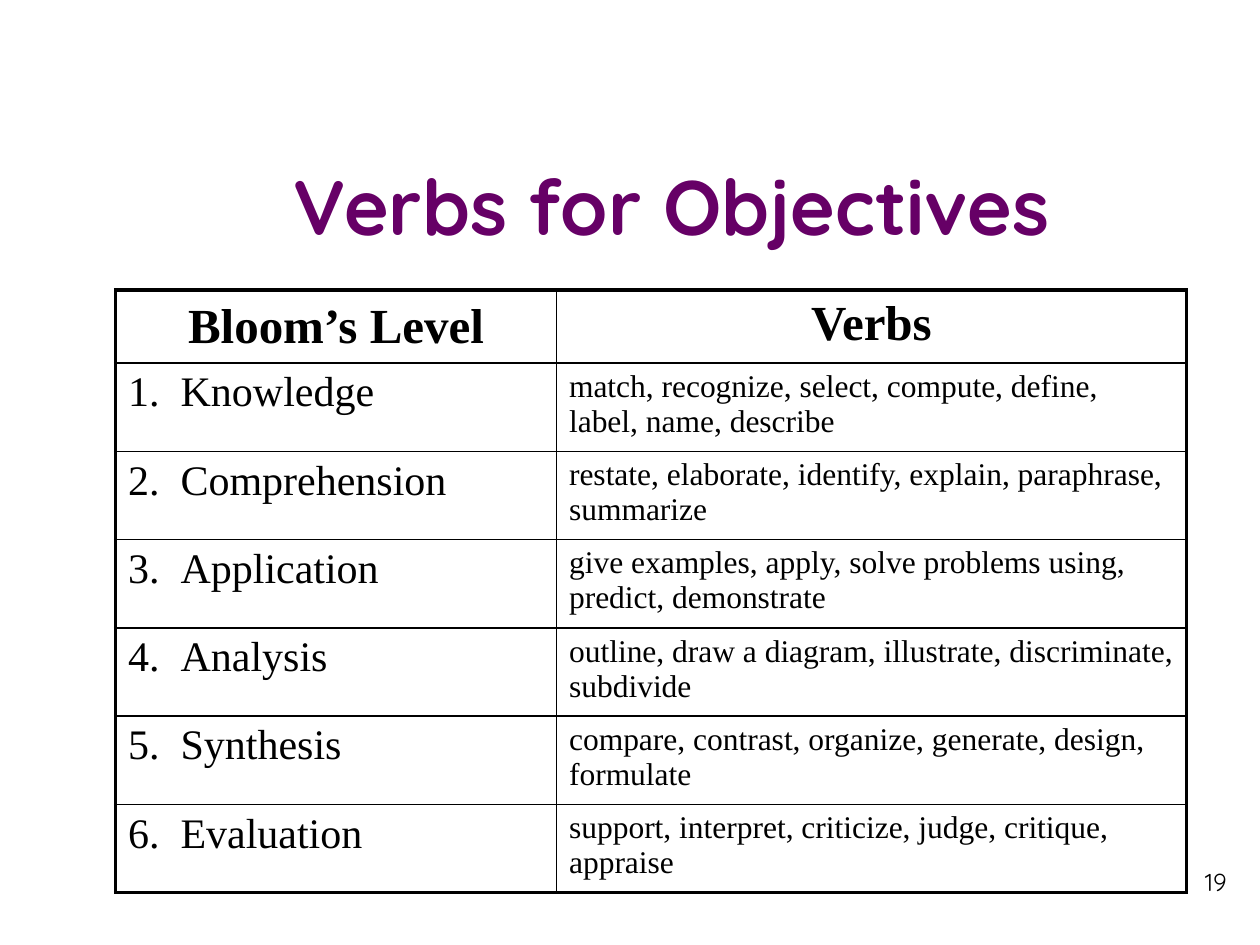
import pptx
import pptx.util
import pptx.dml.color
import pptx.enum.text
import pptx.oxml.ns
import lxml.etree

Pt = pptx.util.Pt
Align = pptx.enum.text.PP_ALIGN
Anchor = pptx.enum.text.MSO_ANCHOR
RGB = pptx.dml.color.RGBColor
BLACK = RGB(0, 0, 0)
WHITE = RGB(255, 255, 255)
PURPLE = RGB(0x66, 0, 0x66)
SANS = "Quicksand"
SERIF = "Times New Roman"

HEADS = ("Bloom’s Level", "Verbs")
LEVELS = [
    ("Knowledge", "match, recognize, select, compute, define, label, name, describe"),
    ("Comprehension", "restate, elaborate, identify, explain, paraphrase, summarize"),
    ("Application", "give examples, apply, solve problems using, predict, demonstrate"),
    ("Analysis", "outline, draw a diagram, illustrate, discriminate, subdivide"),
    ("Synthesis", "compare, contrast, organize, generate, design, formulate"),
    ("Evaluation", "support, interpret, criticize, judge, critique, appraise"),
]
COLS = (252, 360)
ROWS = (41.75, 48.25, 45.5, 43.25, 46.75, 50.25, 48.25)
THICK, THIN = 2.25, 1
INDENT = 30


def node(parent, tag, **attrs):
    return lxml.etree.SubElement(parent, pptx.oxml.ns.qn(tag), attrs)


def style(para, face, size, color, bold, align):
    para.alignment = align
    for run in para.runs:
        font = run.font
        font.name, font.size, font.bold = face, Pt(size), bold
        font.color.rgb = color


def label(slide, text, box, anchor, *look):
    frame = slide.shapes.add_textbox(*map(Pt, box)).text_frame
    frame.word_wrap = True
    frame.vertical_anchor = anchor
    frame.text = text
    style(frame.paragraphs[0], *look)


def border(cell, row, col):
    props = cell._tc.get_or_add_tcPr()
    edges = {
        "a:lnL": col == 0,
        "a:lnR": col == len(COLS) - 1,
        "a:lnT": row == 0,
        "a:lnB": row == len(ROWS) - 1,
    }
    for tag, outer in edges.items():
        line = node(props, tag, w=str(Pt(THICK if outer else THIN)))
        fill = node(line, "a:solidFill")
        node(fill, "a:srgbClr", val=str(BLACK))


def write(cell, text, row, col):
    border(cell, row, col)
    cell.fill.solid()
    cell.fill.fore_color.rgb = WHITE
    cell.margin_left = cell.margin_right = Pt(7.2)
    cell.margin_top = cell.margin_bottom = Pt(3.6)
    head = row == 0
    cell.vertical_anchor = Anchor.MIDDLE if head and col == 0 else Anchor.TOP
    cell.text_frame.text = text
    para = cell.text_frame.paragraphs[0]
    if "\t" in text:
        tabs = node(para._p.get_or_add_pPr(), "a:tabLst")
        node(tabs, "a:tab", pos=str(Pt(INDENT)), algn="l")
    size = 28 if head else (24, 18)[col]
    style(para, SERIF, size, BLACK, head, Align.CENTER if head else Align.LEFT)


def main():
    deck = pptx.Presentation()
    deck.slide_width, deck.slide_height = Pt(720), Pt(540)
    slide = deck.slides.add_slide(deck.slide_layouts[6])
    label(slide, "Verbs for Objectives", (60, 72, 648, 90), Anchor.MIDDLE,
          SANS, 44, PURPLE, True, Align.CENTER)

    table = slide.shapes.add_table(
        len(ROWS), len(COLS), Pt(66), Pt(165.75), Pt(sum(COLS)), Pt(sum(ROWS))
    ).table
    table.first_row = table.horz_banding = False
    for col, width in zip(table.columns, COLS):
        col.width = Pt(width)
    for row, height in zip(table.rows, ROWS):
        row.height = Pt(height)
    body = [(f"{num}.\t{name}", verbs) for num, (name, verbs) in enumerate(LEVELS, 1)]
    for row, texts in enumerate([HEADS] + body):
        for col, text in enumerate(texts):
            write(table.cell(row, col), text, row, col)

    label(slide, "19", (540, 492, 168, 37.5), Anchor.TOP,
          SANS, 14, BLACK, False, Align.RIGHT)
    deck.save("out.pptx")


if __name__ == "__main__":
    main()
